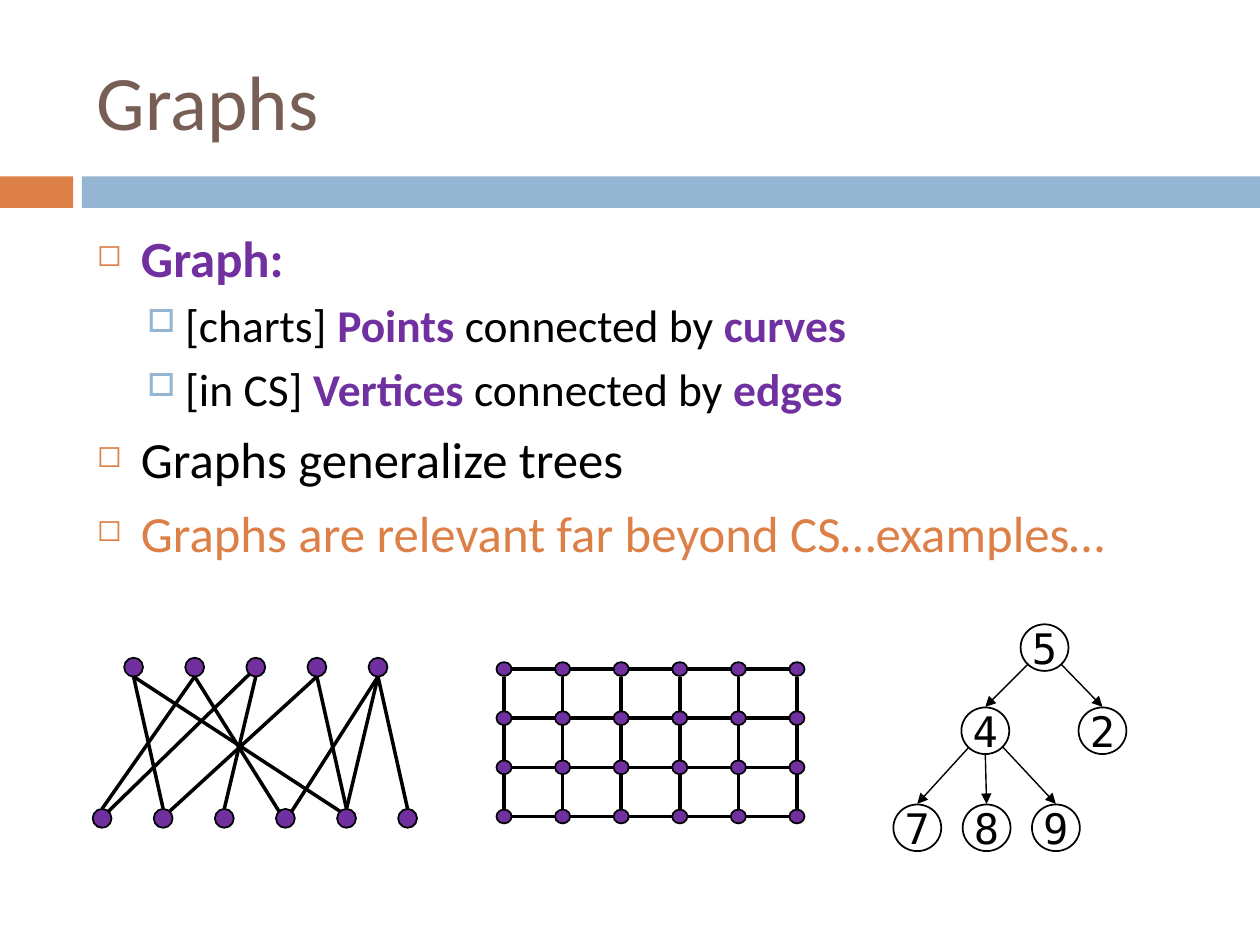
import dataclasses
import itertools

import lxml.etree
import pptx
import pptx.dml.color
import pptx.enum.shapes
import pptx.enum.text
import pptx.oxml.ns
import pptx.util

Inches = pptx.util.Inches
Pt = pptx.util.Pt
qn = pptx.oxml.ns.qn
MIDDLE = pptx.enum.text.MSO_ANCHOR.MIDDLE
CENTER = pptx.enum.text.PP_ALIGN.CENTER


@dataclasses.dataclass(frozen=True)
class Theme:
    black: str = "000000"
    brown: str = "775F55"
    orange: str = "DD8047"
    blue: str = "94B6D2"
    purple: str = "7030A0"
    text_font: str = "Calibri"
    label_font: str = "DejaVu Sans Mono"
    title_size: float = 44
    body_size: float = 29
    detail_size: float = 26
    label_size: float = 24
    outline: float = 1
    edge: float = 2
    arrow: float = 0.79


def rgb(color):
    return pptx.dml.color.RGBColor.from_string(color)


def apply_format(target, values):
    for name, value in values.items():
        setattr(target, name, value)


class SlideBuilder:
    def __init__(self, slide, theme):
        self.slide = slide
        self.theme = theme
        self.canvas = slide.shapes

    def start_group(self):
        self.canvas = self.slide.shapes.add_group_shape().shapes

    def shape(self, kind, box, fill=None, line=None):
        shape = self.canvas.add_shape(kind, *map(Inches, box))
        shape.shadow.inherit = False
        if fill:
            shape.fill.solid()
            shape.fill.fore_color.rgb = rgb(fill)
        else:
            shape.fill.background()
        if line:
            shape.line.color.rgb = rgb(line)
            shape.line.width = Pt(self.theme.outline)
        else:
            shape.line.fill.background()
        return shape

    def bar(self, box, fill):
        self.shape(pptx.enum.shapes.MSO_SHAPE.RECTANGLE, box, fill)

    def vertex(self, center, size, fill=None, label=None):
        (x, y), (width, height) = center, size
        box = (x - width / 2, y - height / 2, width, height)
        shape = self.shape(pptx.enum.shapes.MSO_SHAPE.OVAL, box, fill, self.theme.black)
        if label:
            frame = shape.text_frame
            apply_format(frame, dict(margin_left=0, margin_right=0, margin_top=0,
                                     margin_bottom=0, vertical_anchor=MIDDLE,
                                     word_wrap=False))
            frame.paragraphs[0].alignment = CENTER
            self.run(frame.paragraphs[0], label, self.theme.label_size,
                     self.theme.black, font=self.theme.label_font)

    def edge(self, start, end, width, arrow=False):
        connector = self.canvas.add_connector(
            pptx.enum.shapes.MSO_CONNECTOR.STRAIGHT, *map(Inches, (*start, *end)))
        connector.line.color.rgb = rgb(self.theme.black)
        connector.line.width = Pt(width)
        properties = connector._element.spPr
        if arrow:
            lxml.etree.SubElement(properties.find(qn("a:ln")), qn("a:tailEnd"),
                                  type="triangle")
        lxml.etree.SubElement(properties, qn("a:effectLst"))

    def run(self, paragraph, text, size, color, bold=False, font=None):
        run = paragraph.add_run()
        run.text = text
        apply_format(run.font, dict(name=font or self.theme.text_font,
                                    size=Pt(size), bold=bold))
        run.font.color.rgb = rgb(color)

    def text_box(self, box):
        frame = self.canvas.add_textbox(*map(Inches, box)).text_frame
        frame.word_wrap = True
        return frame

    def title(self, box, text):
        frame = self.text_box(box)
        frame.vertical_anchor = MIDDLE
        self.run(frame.paragraphs[0], text, self.theme.title_size, self.theme.brown)

    def bullet(self, paragraph, level):
        # Left margin, hanging indent, space before, colour, percent, sign
        left, hanging, before, color, percent, sign = (
            (0.35, 0.35, 7, self.theme.orange, 60, "◻"),
            (0.7, 0.3, 5.5, self.theme.blue, 70, "□"))[level]
        apply_format(paragraph, dict(level=level, space_before=Pt(before)))
        properties = paragraph._p.get_or_add_pPr()
        properties.set("marL", str(Inches(left)))
        properties.set("indent", str(-Inches(hanging)))
        bullet_color = lxml.etree.SubElement(properties, qn("a:buClr"))
        lxml.etree.SubElement(bullet_color, qn("a:srgbClr"), val=color)
        lxml.etree.SubElement(properties, qn("a:buSzPct"), val=str(percent * 1000))
        lxml.etree.SubElement(properties, qn("a:buChar"), char=sign)

    def bullet_list(self, box, items):
        frame = self.text_box(box)
        for index, (level, runs) in enumerate(items):
            paragraph = frame.add_paragraph() if index else frame.paragraphs[0]
            self.bullet(paragraph, level)
            size = self.theme.detail_size if level else self.theme.body_size
            for text, color in runs:
                self.run(paragraph, text, size, color, color == self.theme.purple)


def draw_bipartite_graph(builder):
    theme = builder.theme
    step, top_y, bottom_y = 0.485, 5.295, 6.495
    top = [1.06 + step * index for index in range(5)]
    bottom = [0.81 + step * index for index in range(6)]
    builder.start_group()
    for x, y in [(x, top_y) for x in top] + [(x, bottom_y) for x in bottom]:
        builder.vertex((x, y), (0.15, 0.15), theme.purple)
    # Top vertex, bottom vertex, and the side on which the edge meets each
    for first, second, first_side, second_side in (
            (4, 5, 0, 0), (4, 4, 0, 0), (4, 3, 0, 1), (3, 4, 0, 0),
            (3, 1, 0, 1), (0, 4, 0, -1), (2, 2, 0, 0), (1, 0, 0, 0),
            (1, 3, 0, -1), (0, 1, 0, 0), (2, 0, -1, 1)):
        start = (top[first] + 0.05 * first_side, 5.37 - 0.02 * abs(first_side))
        end = (bottom[second] + 0.05 * second_side, 6.42 + 0.02 * abs(second_side))
        builder.edge(start, end, theme.edge)


def draw_grid_graph(builder):
    theme = builder.theme
    columns = [4 + 0.465 * index for index in range(6)]
    rows = [5.31 + 0.39 * index for index in range(4)]
    builder.start_group()
    for x in columns:
        builder.edge((x, 5.37), (x, 6.42), theme.edge)
    for y in rows:
        builder.edge((4.06, y), (6.26, y), theme.edge)
    for y, x in itertools.product(rows, columns):
        builder.vertex((x, y), (0.12, 0.11), theme.purple)


def draw_tree(builder):
    theme = builder.theme
    builder.start_group()
    for label, x, y in (("5", 8.29, 5.14), ("4", 7.82, 5.8), ("2", 8.75, 5.8),
                        ("7", 7.28, 6.57), ("8", 7.83, 6.57), ("9", 8.38, 6.57)):
        builder.vertex((x, y), (0.38, 0.37), label=label)
    for start, end in (((8.16, 5.27), (7.82, 5.61)), ((8.42, 5.27), (8.75, 5.61)),
                       ((7.69, 5.93), (7.28, 6.38)), ((7.82, 5.98), (7.83, 6.38)),
                       ((7.96, 5.93), (8.38, 6.38))):
        builder.edge(start, end, theme.arrow, arrow=True)


def main():
    presentation = pptx.Presentation()
    apply_format(presentation, dict(slide_width=Inches(10), slide_height=Inches(7.5)))
    slide = presentation.slides.add_slide(presentation.slide_layouts[6])
    theme = Theme()
    builder = SlideBuilder(slide, theme)

    # Header bars and title
    builder.bar((0, 1.4, 0.58, 0.25), theme.orange)
    builder.bar((0.65, 1.4, 9.35, 0.25), theme.blue)
    builder.title((0.67, 0.25, 8.92, 1.08), "Graphs")

    # Definitions
    black, purple = theme.black, theme.purple
    builder.bullet_list((0.67, 1.75, 8.92, 4.92), (
        (0, [("Graph:", purple)]),
        (1, [("[charts] ", black), ("Points ", purple),
             ("connected by ", black), ("curves", purple)]),
        (1, [("[in CS] ", black), ("Vertices", purple),
             (" connected by ", black), ("edges", purple)]),
        (0, [("Graphs generalize trees", black)]),
        (0, [("Graphs are relevant far beyond CS…examples…", theme.orange)])))

    # Example graphs
    draw_bipartite_graph(builder)
    draw_grid_graph(builder)
    draw_tree(builder)
    presentation.save("out.pptx")


if __name__ == "__main__":
    main()
